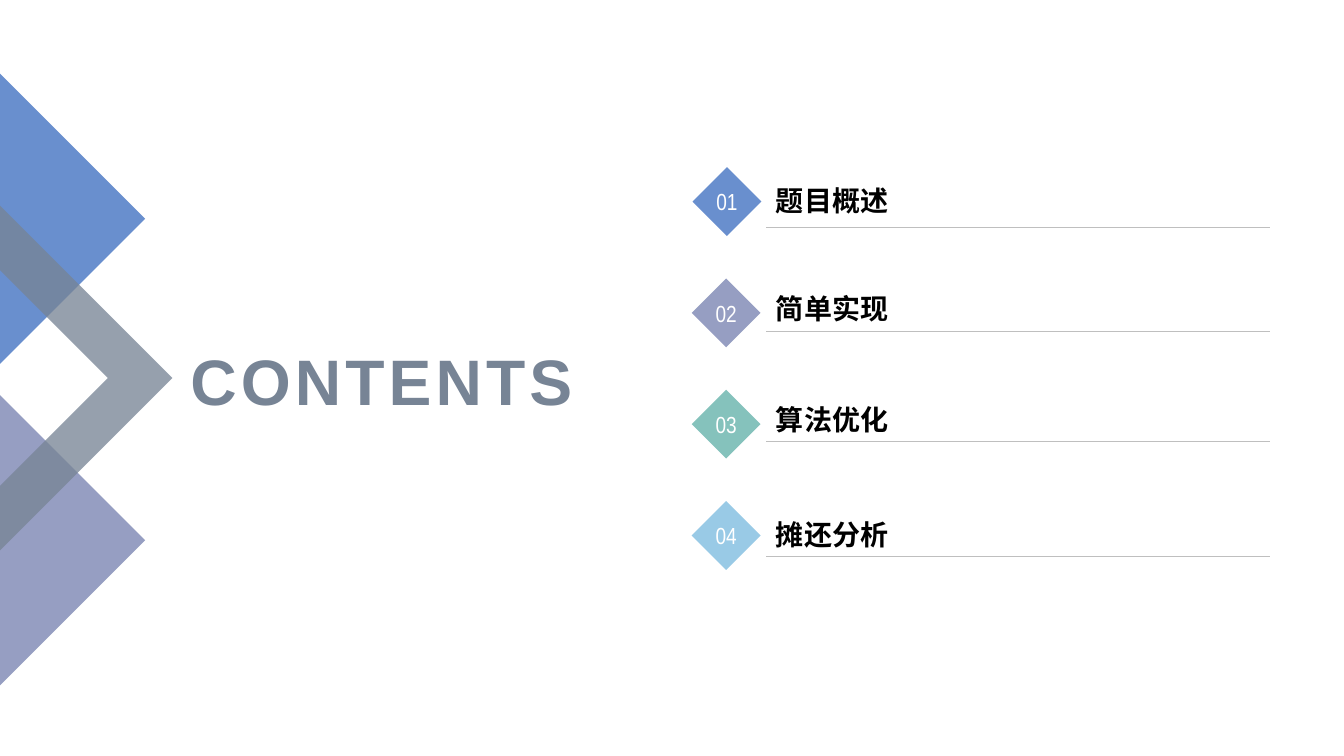
from dataclasses import dataclass
from typing import Any

from lxml import etree
from pptx import Presentation
from pptx import util as u
from pptx.dml import color as dml
from pptx.enum import shapes, text
from pptx.oxml import ns

COLUMNS, ROWS = 160, 90
CELL = u.Inches(7.5) / ROWS


@dataclass(frozen=True)
class Theme:
    blue: str = "698FCE"
    violet: str = "969EC2"
    green: str = "85C2BC"
    sky: str = "99CAE6"
    slate: str = "778495"
    rule: str = "BFBFBF"
    white: str = "FFFFFF"
    black: str = "000000"
    font: str = "Arial"
    number_font: str = "Arial Narrow"
    title_size: float = 45.9
    number_size: float = 16.6
    heading_size: float = 20
    rule_width: float = 0.25
    chevron_opacity: int = 77


@dataclass(frozen=True)
class Band:
    """A polygon bleeding off the left edge, in grid cells."""
    corners: tuple[tuple[float, float], ...]
    color: str
    opacity: int = 100


@dataclass(frozen=True)
class Entry:
    heading: str
    color: str
    diamond_column: float
    heading_top: float
    heading_bottom: float
    rule_row: float


THEME = Theme()
MIDDLE = 45
REACH = 17.28
CHEVRON_OUTER, CHEVRON_INNER = 20.52, 12.84

FIRST_DIAMOND_ROW, DIAMOND_STEP, DIAMOND_SIZE = 19.9, 13.25, 8.2
ENTRY_LEFT, RULE_RIGHT, HEADING_WIDTH = 91.2, 151.2, 52


def triangle(center_row: float) -> tuple[tuple[float, float], ...]:
    return (0, center_row - REACH), (REACH, center_row), (0, center_row + REACH)


BANDS = (
    Band(triangle(64.32), THEME.violet),
    Band(triangle(26.04), THEME.blue),
    Band(((CHEVRON_OUTER, MIDDLE), (0, MIDDLE + CHEVRON_OUTER),
          (0, MIDDLE + CHEVRON_INNER), (CHEVRON_INNER, MIDDLE),
          (0, MIDDLE - CHEVRON_INNER), (0, MIDDLE - CHEVRON_OUTER)),
         THEME.slate, THEME.chevron_opacity),
)
ENTRIES = (
    Entry("题目概述", THEME.blue, 82.45, 19.8, 26.5, 27),
    Entry("简单实现", THEME.violet, 82.35, 31.95, 39.25, 39.4),
    Entry("算法优化", THEME.green, 82.35, 44.3, 52.45, 52.55),
    Entry("摊还分析", THEME.sky, 82.35, 59.65, 66.25, 66.25),
)


def cells(*lengths: float) -> list[u.Emu]:
    return [u.Emu(round(length * CELL)) for length in lengths]


def apply(target: Any, formats: dict[str, Any]) -> None:
    for name, value in formats.items():
        setattr(target, name, value)


def paint(shape: Any, color: str, opacity: int = 100) -> None:
    shape.shadow.inherit = False
    shape.fill.solid()
    shape.fill.fore_color.rgb = dml.RGBColor.from_string(color)
    shape.line.fill.background()
    if opacity < 100:
        fill_color = shape._element.spPr.find(ns.qn("a:solidFill"))[0]
        etree.SubElement(fill_color, ns.qn("a:alpha"), val=str(opacity * 1000))


def write(shape: Any, words: str, color: str, font: dict[str, Any],
          frame: dict[str, Any], alignment: Any) -> Any:
    apply(shape.text_frame, frame)
    paragraph = shape.text_frame.paragraphs[0]
    paragraph.alignment = alignment
    run = paragraph.add_run()
    run.text = words
    apply(run.font, font)
    run.font.color.rgb = dml.RGBColor.from_string(color)
    return run


def draw_band(slide: Any, band: Band) -> None:
    first, *others = [cells(*corner) for corner in band.corners]
    builder = slide.shapes.build_freeform(*first)
    builder.add_line_segments(others, close=True)
    paint(builder.convert_to_shape(), band.color, band.opacity)


def draw_title(slide: Any) -> None:
    box = slide.shapes.add_textbox(*cells(20.28, 39.12, 49.08, 12.12))
    run = write(box, "CONTENTS", THEME.slate,
                {"name": THEME.font, "size": u.Pt(THEME.title_size), "bold": True},
                {"word_wrap": True, "vertical_anchor": text.MSO_ANCHOR.MIDDLE},
                text.PP_ALIGN.RIGHT)
    run._r.get_or_add_rPr().set("spc", "300")


def draw_entry(slide: Any, index: int, entry: Entry) -> None:
    diamond = slide.shapes.add_shape(
        shapes.MSO_SHAPE.DIAMOND,
        *cells(entry.diamond_column, FIRST_DIAMOND_ROW + index * DIAMOND_STEP,
               DIAMOND_SIZE, DIAMOND_SIZE))
    paint(diamond, entry.color)
    write(diamond, f"{index + 1:02d}", THEME.white,
          {"name": THEME.number_font, "size": u.Pt(THEME.number_size)},
          {"word_wrap": False, "vertical_anchor": text.MSO_ANCHOR.MIDDLE},
          text.PP_ALIGN.CENTER)

    heading = slide.shapes.add_textbox(
        *cells(ENTRY_LEFT, entry.heading_top, HEADING_WIDTH,
               entry.heading_bottom - entry.heading_top))
    write(heading, entry.heading, THEME.black,
          {"name": THEME.font, "size": u.Pt(THEME.heading_size), "bold": True},
          {"word_wrap": True, "vertical_anchor": text.MSO_ANCHOR.BOTTOM},
          text.PP_ALIGN.LEFT)

    rule = slide.shapes.add_connector(
        shapes.MSO_CONNECTOR.STRAIGHT,
        *cells(ENTRY_LEFT, entry.rule_row, RULE_RIGHT, entry.rule_row))
    rule.line.width = u.Pt(THEME.rule_width)
    rule.line.color.rgb = dml.RGBColor.from_string(THEME.rule)
    etree.SubElement(rule._element.spPr, ns.qn("a:effectLst"))


def main() -> None:
    presentation = Presentation()
    width, height = cells(COLUMNS, ROWS)
    apply(presentation, {"slide_width": width, "slide_height": height})
    slide = presentation.slides.add_slide(presentation.slide_layouts[6])
    for band in BANDS:
        draw_band(slide, band)
    draw_title(slide)
    for index, entry in enumerate(ENTRIES):
        draw_entry(slide, index, entry)
    presentation.save("out.pptx")


if __name__ == "__main__":
    main()
